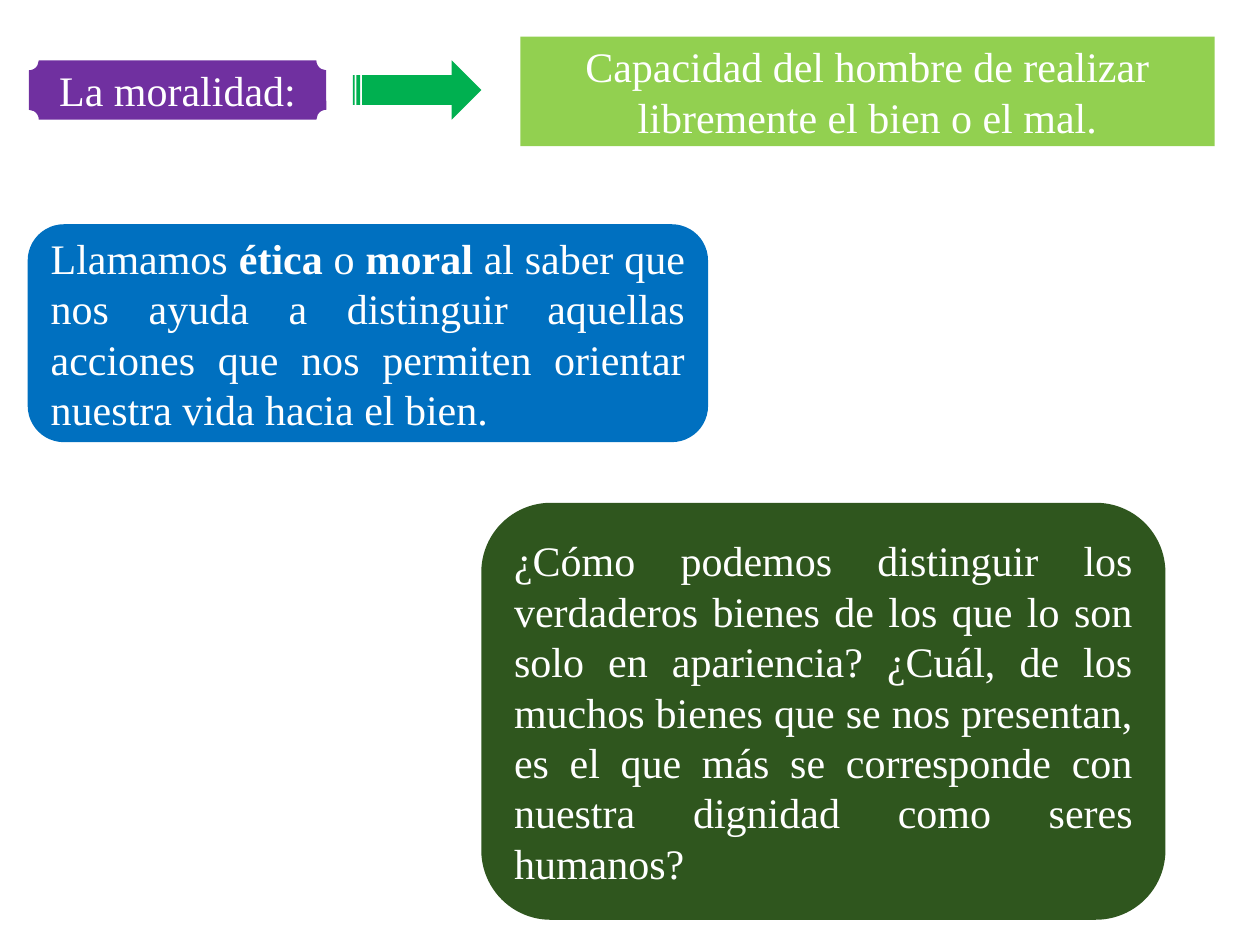
from pptx import Presentation
from pptx.dml.color import RGBColor
from pptx.enum.shapes import MSO_SHAPE
from pptx.enum.text import MSO_ANCHOR, PP_ALIGN
from pptx.util import Inches, Pt

PLAQUE = MSO_SHAPE.PLAQUE
RECT = MSO_SHAPE.RECTANGLE
ROUND = MSO_SHAPE.ROUNDED_RECTANGLE
ARROW = MSO_SHAPE.STRIPED_RIGHT_ARROW
MIDDLE = MSO_ANCHOR.MIDDLE
CENTER = PP_ALIGN.CENTER
JUSTIFY = PP_ALIGN.JUSTIFY

WIDE, HIGH = 10, 7.5
COLS, ROWS = 100, 75


def color(code):
    return RGBColor.from_string(code)


class Board:
    font = {"name": "Times New Roman", "size": Pt(24)}
    frame = {"word_wrap": True, "vertical_anchor": MIDDLE}
    ink = "FFFFFF"

    def __init__(self, deck):
        self.deck = deck
        self.slide = deck.slides.add_slide(deck.slide_layouts[6])

    def apply(self, item, style):
        for key, value in style.items():
            setattr(item, key, value)

    def place(self, col, row, cols, rows):
        wide, high = self.deck.slide_width, self.deck.slide_height
        return (round(wide * col / COLS), round(high * row / ROWS),
                round(wide * cols / COLS), round(high * rows / ROWS))

    def shape(self, kind, area, fill):
        shape = self.slide.shapes.add_shape(kind, *self.place(*area))
        shape.shadow.inherit = False
        shape.fill.solid()
        shape.fill.fore_color.rgb = color(fill)
        shape.line.fill.background()
        return shape

    def box(self, kind, area, fill, align, parts):
        frame = self.shape(kind, area, fill).text_frame
        self.apply(frame, self.frame)
        para = frame.paragraphs[0]
        para.alignment = align
        for text, bold in parts:
            run = para.add_run()
            run.text = text
            self.apply(run.font, {**self.font, "bold": bold})
            run.font.color.rgb = color(self.ink)


def main():
    deck = Presentation()
    deck.slide_width, deck.slide_height = Inches(WIDE), Inches(HIGH)
    board = Board(deck)
    board.box(PLAQUE, (2.3, 4.8, 23.6, 4.7), "7030A0", CENTER,
              [("La moralidad:", False)])
    board.box(RECT, (41.3, 2.9, 55.1, 8.7), "92D050", CENTER,
              [("Capacidad del hombre de realizar libremente "
                "el bien o el mal.", False)])
    board.box(ROUND, (2.2, 17.8, 54, 17.3), "0070C0", JUSTIFY,
              [("Llamamos ", False), ("ética", True), (" o ", False),
               ("moral", True),
               (" al saber que nos ayuda a distinguir aquellas acciones que "
                "nos permiten orientar nuestra vida hacia el bien.", False)])
    board.box(ROUND, (38.2, 39.9, 54.3, 33.1), "2F561E", JUSTIFY,
              [("¿Cómo podemos distinguir los verdaderos bienes de los que lo "
                "son solo en apariencia? ¿Cuál, de los muchos bienes que se "
                "nos presentan, es el que más se corresponde con nuestra "
                "dignidad como seres humanos?", False)])
    board.shape(ARROW, (28, 4.8, 10.2, 4.7), "00B050")
    deck.save("out.pptx")


if __name__ == "__main__":
    main()
